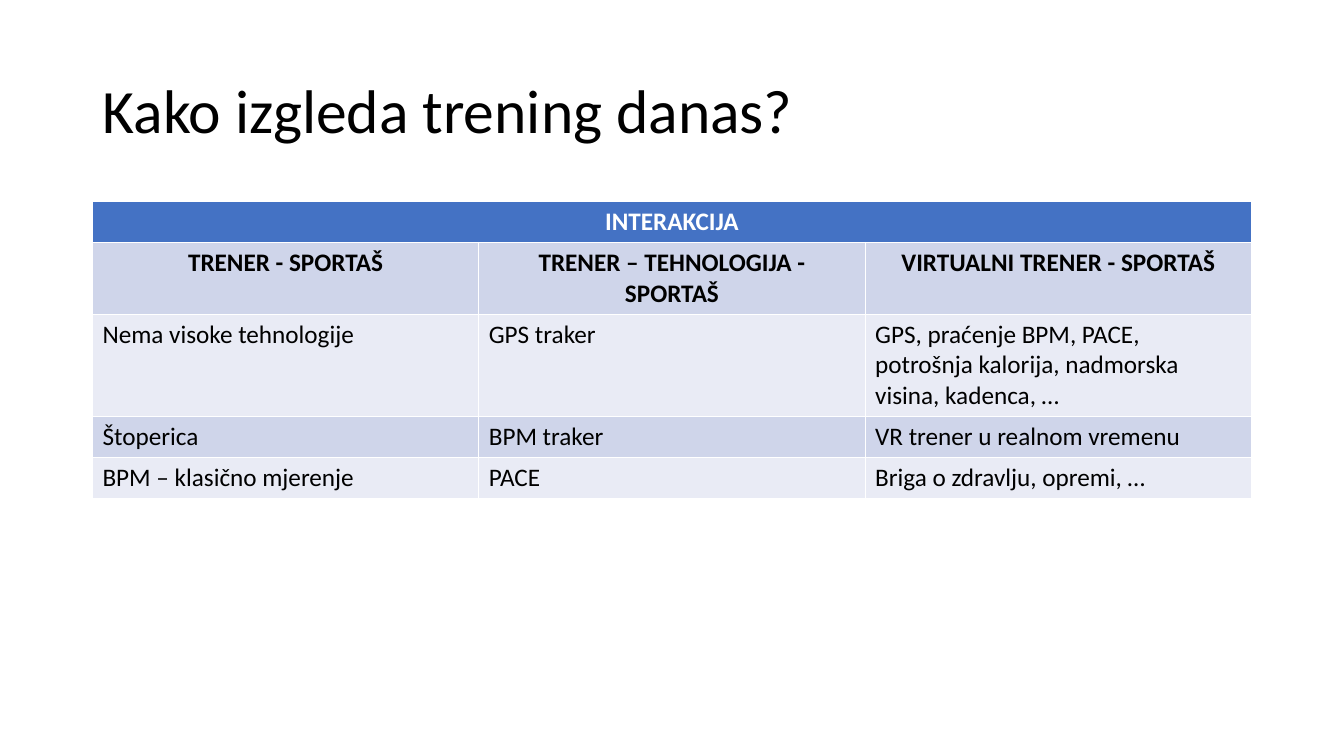
from pptx import Presentation
from pptx.dml.color import RGBColor
from pptx.enum.text import MSO_ANCHOR as Anchor, PP_ALIGN as Align
from pptx.util import Cm, Pt

TITLE = "Kako izgleda trening danas?"
HEADING = "INTERAKCIJA"
ROWS = [
    ("TRENER - SPORTAŠ", "TRENER – TEHNOLOGIJA - SPORTAŠ", "VIRTUALNI TRENER - SPORTAŠ"),
    ("Nema visoke tehnologije", "GPS traker",
     "GPS, praćenje BPM, PACE, potrošnja kalorija, nadmorska visina, kadenca, …"),
    ("Štoperica", "BPM traker", "VR trener u realnom vremenu"),
    ("BPM – klasično mjerenje", "PACE", "Briga o zdravlju, opremi, …"),
]
COLORS = {"text": "000000", "heading_text": "FFFFFF", "heading": "4472C4",
          "dark_band": "CFD5EA", "light_band": "E9EBF5"}
FONT = "Calibri"
LEFT, WIDTH = Cm(2.33), Cm(29.21)
TABLE_TOP, ROW_HEIGHT = Cm(5.08), Cm(1.03)


def format_text(para, size, color, bold, align):
    para.alignment = align
    para.font.name = FONT
    para.font.size = Pt(size)
    para.font.bold = bold
    para.font.color.rgb = RGBColor.from_string(COLORS[color])


def fill_cell(cell, text, fill, color="text", bold=False):
    cell.text = text
    cell.fill.solid()
    cell.fill.fore_color.rgb = RGBColor.from_string(COLORS[fill])
    format_text(cell.text_frame.paragraphs[0], 18, color, bold,
                Align.CENTER if bold else Align.LEFT)


def add_title(page):
    title = page.shapes.title
    title.left, title.top, title.width, title.height = LEFT, Cm(1.01), WIDTH, Cm(3.68)
    title.text_frame.text = TITLE
    title.text_frame.vertical_anchor = Anchor.MIDDLE
    para = title.text_frame.paragraphs[0]
    para.line_spacing = 0.9
    format_text(para, 44, "text", False, Align.LEFT)


def add_interaction_table(page):
    row_count = len(ROWS) + 1
    table = page.shapes.add_table(row_count, len(ROWS[0]), LEFT, TABLE_TOP,
                                  WIDTH, ROW_HEIGHT * row_count).table
    heading = table.cell(0, 0)
    heading.merge(table.cell(0, len(ROWS[0]) - 1))
    fill_cell(heading, HEADING, "heading", "heading_text", True)
    for row, texts in enumerate(ROWS, start=1):
        band = "dark_band" if row % 2 else "light_band"
        for column, text in enumerate(texts):
            fill_cell(table.cell(row, column), text, band, bold=row == 1)


def main():
    deck = Presentation()
    deck.slide_width, deck.slide_height = Cm(33.87), Cm(19.05)
    page = deck.slides.add_slide(deck.slide_layouts[5])
    add_title(page)
    add_interaction_table(page)
    deck.save("out.pptx")


if __name__ == "__main__":
    main()
